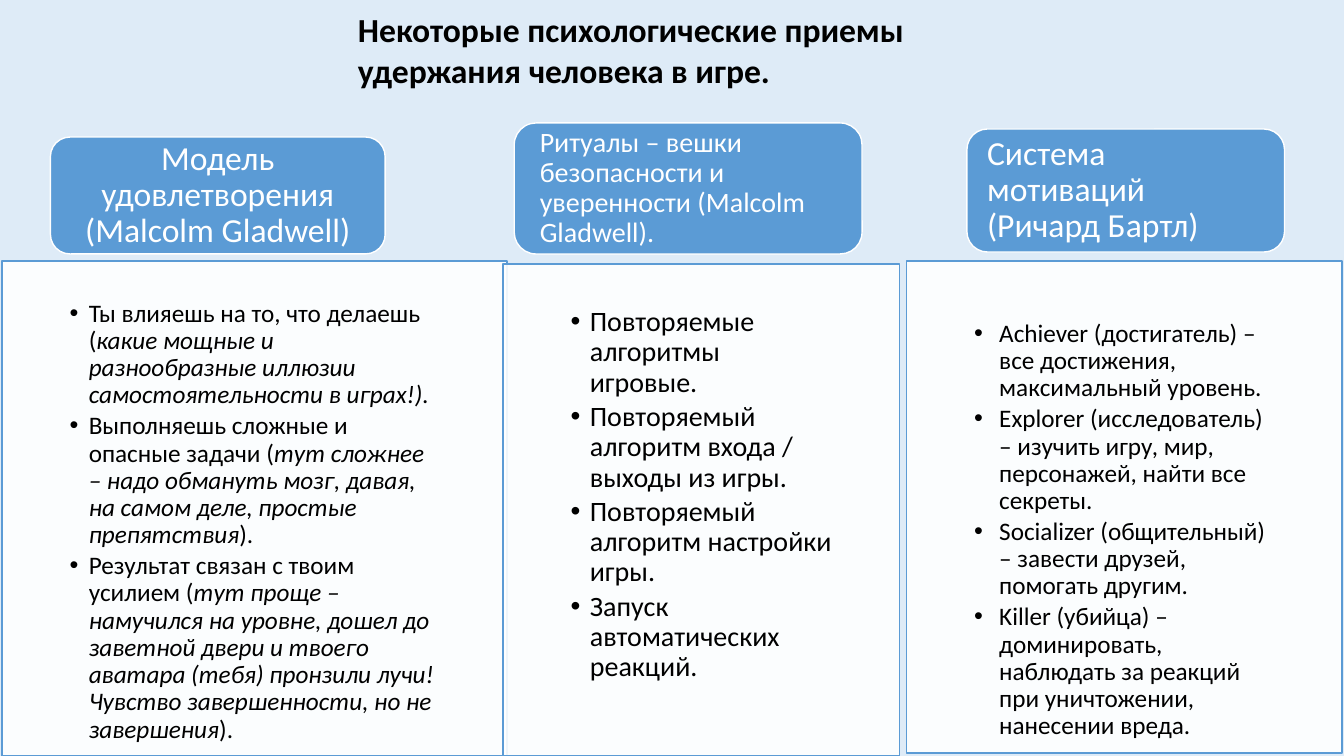
from dataclasses import dataclass

from lxml import etree
from pptx import Presentation
from pptx.dml.color import RGBColor
from pptx.enum.shapes import MSO_SHAPE
from pptx.enum.text import MSO_ANCHOR, MSO_AUTO_SIZE, PP_ALIGN
from pptx.oxml.ns import qn
from pptx.util import Emu, Pt

RECT, ROUNDED = MSO_SHAPE.RECTANGLE, MSO_SHAPE.ROUNDED_RECTANGLE
TOP, MIDDLE = MSO_ANCHOR.TOP, MSO_ANCHOR.MIDDLE
LEFT, CENTER = PP_ALIGN.LEFT, PP_ALIGN.CENTER
EMU_PER_PX = 9144  # 100 px to the inch


@dataclass(frozen=True)
class Theme:
    font: str = "Calibri"
    background: str = "DEEBF7"
    accent: str = "5B9BD5"
    white: str = "FFFFFF"
    black: str = "000000"
    large: int = 24
    medium: int = 20
    small: int = 18


THEME = Theme()

TITLE = "Некоторые психологические приемы удержания человека в игре."

# Boxes are left, top, width, height; insets are left, top, right, bottom.
# Text between asterisks is italic.
COLUMNS = [
    dict(
        head="Модель удовлетворения (Malcolm Gladwell)",
        head_box=(50, 136, 332, 116), head_insets=(19, 0, 19, 0),
        head_size=THEME.large, head_align=CENTER,
        panel_box=(2, 259, 501, 491), panel_insets=(67, 39, 67, 13),
        panel_size=THEME.small, hang=19,
        items=[
            "Ты влияешь на то, что делаешь (*какие мощные и разнообразные "
            "иллюзии самостоятельности в играх!).*",
            "Выполняешь сложные и опасные задачи (*тут сложнее – надо обмануть "
            "мозг, давая, на самом деле, простые препятствия*).",
            "Результат связан с твоим усилием (*тут проще – намучился на уровне, "
            "дошел до заветной двери и твоего аватара (тебя) пронзили лучи! "
            "Чувство завершенности, но не завершения*).",
        ],
    ),
    dict(
        head="Ритуалы – вешки безопасности и уверенности (Malcolm Gladwell).",
        head_box=(510, 122, 345, 130), head_insets=(19, 0, 19, 0),
        head_size=THEME.medium, head_align=LEFT,
        panel_box=(499, 262, 393, 488), panel_insets=(67, 43, 67, 15),
        panel_size=THEME.medium, hang=19,
        items=[
            "Повторяемые алгоритмы игровые.",
            "Повторяемый алгоритм входа / выходы из игры.",
            "Повторяемый алгоритм настройки игры.",
            "Запуск автоматических реакций.",
        ],
    ),
    dict(
        head="Система мотиваций (Ричард Бартл)",
        head_box=(959, 128, 315, 122), head_insets=(14, 0, 28, 0),
        head_size=THEME.large, head_align=LEFT,
        panel_box=(899, 259, 432, 488), panel_insets=(67, 59, 67, 20),
        panel_size=THEME.small, hang=25,
        items=[
            "Achiever (достигатель) – все достижения, максимальный уровень.",
            "Explorer (исследователь) – изучить игру, мир, персонажей, найти все секреты.",
            "Socializer (общительный) – завести друзей, помогать другим.",
            "Killer (убийца) – доминировать, наблюдать за реакций при уничтожении, "
            "нанесении вреда.",
        ],
    ),
]


def px(n):
    return Emu(n * EMU_PER_PX)


def rgb(color):
    return RGBColor.from_string(color)


def add_bullet(p, hang):
    pPr = p._p.get_or_add_pPr()
    pPr.set("marL", str(px(hang)))
    pPr.set("indent", str(-px(hang)))
    etree.SubElement(pPr, qn("a:buFont")).set("typeface", "Arial")
    etree.SubElement(pPr, qn("a:buChar")).set("char", "•")


def write_text(tf, paragraphs, size, color, insets=(10, 5, 10, 5), bold=False,
               align=LEFT, anchor=TOP, line_spacing=0.9, space_after=0, hang=0):
    tf.word_wrap = True
    tf.auto_size = MSO_AUTO_SIZE.NONE
    tf.vertical_anchor = anchor
    tf.margin_left, tf.margin_top, tf.margin_right, tf.margin_bottom = map(px, insets)
    for i, text in enumerate(paragraphs):
        p = tf.add_paragraph() if i else tf.paragraphs[0]
        if hang:
            add_bullet(p, hang)
        p.alignment = align
        p.line_spacing = line_spacing
        p.space_before = Pt(0)
        p.space_after = Pt(space_after)
        for j, part in enumerate(text.split("*")):
            if part:
                r = p.add_run()
                r.text = part
                r.font.name = THEME.font
                r.font.size = Pt(size)
                r.font.bold = bold
                r.font.italic = j % 2 == 1
                r.font.color.rgb = rgb(color)


def add_box(slide, preset, box, fill, line, opacity=100):
    sp = slide.shapes.add_shape(preset, *map(px, box))
    sp.shadow.inherit = False
    sp.fill.solid()
    sp.fill.fore_color.rgb = rgb(fill)
    if opacity < 100:
        clr = sp._element.spPr.find(qn("a:solidFill"))[0]
        etree.SubElement(clr, qn("a:alpha")).set("val", str(opacity * 1000))
    sp.line.color.rgb = rgb(line)
    sp.line.width = Pt(1)
    return sp


def add_title(slide, box):
    sp = slide.shapes.title
    sp.left, sp.top, sp.width, sp.height = map(px, box)
    write_text(sp.text_frame, [TITLE], THEME.large, THEME.black,
               bold=True, line_spacing=1.0)


def add_column(slide, col):
    # Panel with the bulleted list
    panel = add_box(slide, RECT, col["panel_box"], THEME.white, THEME.accent, opacity=90)
    write_text(panel.text_frame, col["items"], col["panel_size"], THEME.black,
               insets=col["panel_insets"], space_after=round(col["panel_size"] * 0.15, 1),
               hang=col["hang"])
    # Rounded heading
    head = add_box(slide, ROUNDED, col["head_box"], THEME.accent, THEME.white)
    write_text(head.text_frame, [col["head"]], col["head_size"], THEME.white,
               insets=col["head_insets"], align=col["head_align"], anchor=MIDDLE)


def main():
    prs = Presentation()
    prs.slide_width, prs.slide_height = px(1333), px(750)
    slide = prs.slides.add_slide(prs.slide_layouts[5])
    slide.background.fill.solid()
    slide.background.fill.fore_color.rgb = rgb(THEME.background)
    add_title(slide, (345, 4, 644, 91))
    for col in COLUMNS:
        add_column(slide, col)
    prs.save("out.pptx")


if __name__ == "__main__":
    main()
